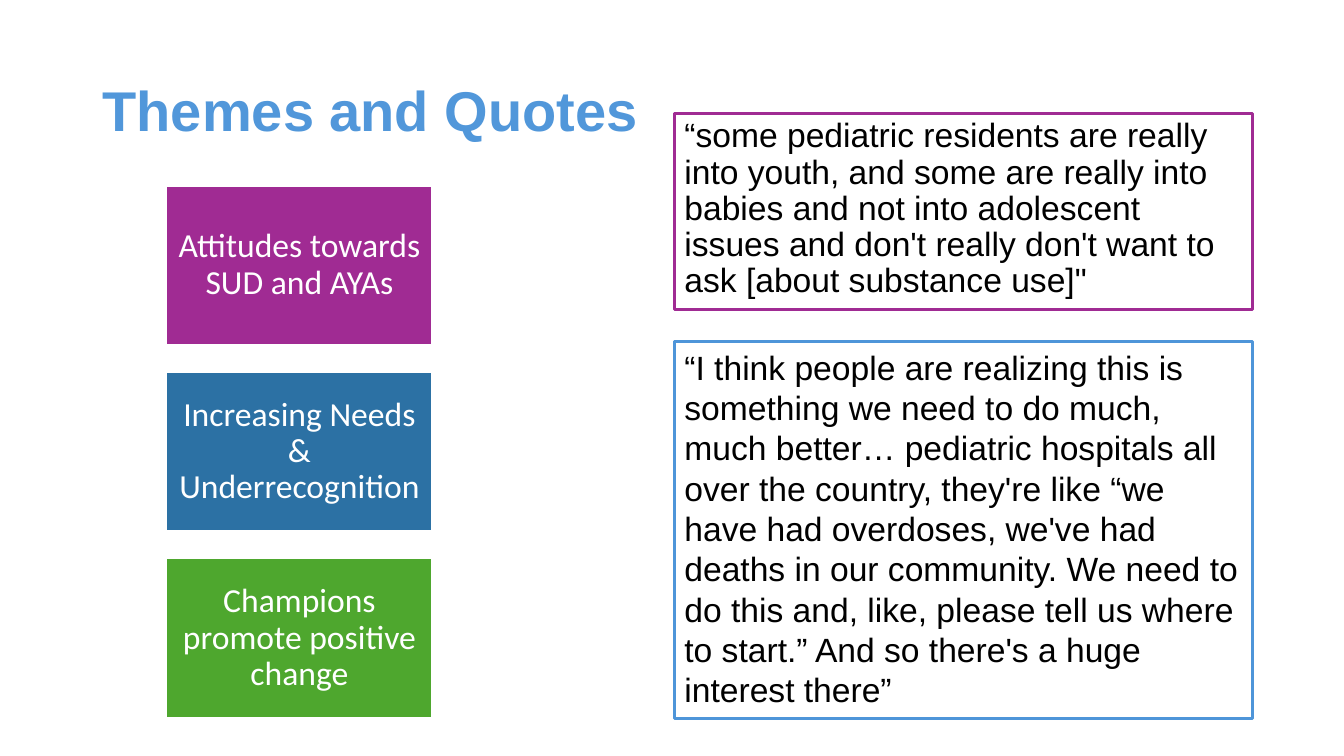
from dataclasses import dataclass

from pptx import Presentation
from pptx.dml.color import RGBColor
from pptx.enum.shapes import MSO_SHAPE
from pptx.enum.text import MSO_ANCHOR, PP_ALIGN
from pptx.slide import Slide
from pptx.text.text import TextFrame
from pptx.util import Inches, Pt

RECTANGLE = MSO_SHAPE.RECTANGLE
TOP, MIDDLE = MSO_ANCHOR.TOP, MSO_ANCHOR.MIDDLE
LEFT, CENTER = PP_ALIGN.LEFT, PP_ALIGN.CENTER

COLORS = {
    "heading": "5197DA",
    "purple": "A02B93",
    "blue": "2C71A4",
    "green": "4EA72E",
    "sky": "4E95D9",
    "white": "FFFFFF",
    "black": "000000",
}

THEME_LEFT, THEME_TOP, THEME_PITCH = 1.65, 1.84, 1.85
THEME_WIDTH, THEME_HEIGHT = 2.64, 1.58
QUOTE_LEFT, QUOTE_WIDTH = 6.69, 5.73


@dataclass(frozen=True)
class Theme:
    label: str
    color: str


@dataclass(frozen=True)
class Quote:
    words: str
    color: str
    top: float
    height: float
    line_spacing: float


THEMES = [
    Theme("Attitudes towards SUD and AYAs", "purple"),
    Theme("Increasing Needs & Underrecognition", "blue"),
    Theme("Champions promote positive change", "green"),
]

QUOTES = [
    Quote(
        "“some pediatric residents are really into youth, and some are really "
        "into babies and not into adolescent issues and don't really don't "
        "want to ask [about substance use]\"",
        "purple", 1.13, 1.94, 0.9,
    ),
    Quote(
        "“I think people are realizing this is something we need to do much, "
        "much better… pediatric hospitals all over the country, they're like "
        "“we have had overdoses, we've had deaths in our community. We need to "
        "do this and, like, please tell us where to start.” And so there's a "
        "huge interest there”",
        "sky", 3.39, 3.74, 1.0,
    ),
]


def rgb(name: str) -> RGBColor:
    return RGBColor.from_string(COLORS[name])


def write(frame: TextFrame, words: str, color: str, font: dict,
          anchor: MSO_ANCHOR, align: PP_ALIGN, line_spacing: float) -> None:
    frame.word_wrap = True
    frame.vertical_anchor = anchor
    paragraph = frame.paragraphs[0]
    paragraph.alignment = align
    paragraph.line_spacing = line_spacing
    run = paragraph.add_run()
    run.text = words
    run.font.color.rgb = rgb(color)
    for attribute, value in font.items():
        setattr(run.font, attribute, value)


def add_heading(slide: Slide, words: str) -> None:
    heading = slide.shapes.add_textbox(
        Inches(0.92), Inches(0.4), Inches(11.5), Inches(1.45))
    font = {"name": "Arial", "size": Pt(40), "bold": True}
    write(heading.text_frame, words, "heading", font, MIDDLE, LEFT, 0.9)


def add_theme(slide: Slide, theme: Theme, top: float) -> None:
    block = slide.shapes.add_shape(
        RECTANGLE, Inches(THEME_LEFT), Inches(top),
        Inches(THEME_WIDTH), Inches(THEME_HEIGHT))
    block.shadow.inherit = False
    block.fill.solid()
    block.fill.fore_color.rgb = rgb(theme.color)
    block.line.color.rgb = rgb("white")
    block.line.width = Pt(1.5)
    for side in ("left", "top", "right", "bottom"):
        setattr(block.text_frame, f"margin_{side}", Inches(0.1))
    font = {"name": "Calibri", "size": Pt(24)}
    write(block.text_frame, theme.label, "white", font, MIDDLE, CENTER, 0.9)


def add_quote(slide: Slide, quote: Quote) -> None:
    frame = slide.shapes.add_shape(
        RECTANGLE, Inches(QUOTE_LEFT), Inches(quote.top),
        Inches(QUOTE_WIDTH), Inches(quote.height))
    frame.shadow.inherit = False
    frame.fill.background()
    frame.line.color.rgb = rgb(quote.color)
    frame.line.width = Pt(2.25)
    font = {"name": "Arial", "size": Pt(24)}
    write(frame.text_frame, quote.words, "black", font, TOP, LEFT,
          quote.line_spacing)


def main() -> None:
    deck = Presentation()
    deck.slide_width, deck.slide_height = Inches(13.33), Inches(7.5)
    slide = deck.slides.add_slide(deck.slide_layouts[6])
    add_heading(slide, "Themes and Quotes")
    for row, theme in enumerate(THEMES):
        add_theme(slide, theme, THEME_TOP + row * THEME_PITCH)
    for quote in QUOTES:
        add_quote(slide, quote)
    deck.save("out.pptx")


if __name__ == "__main__":
    main()
